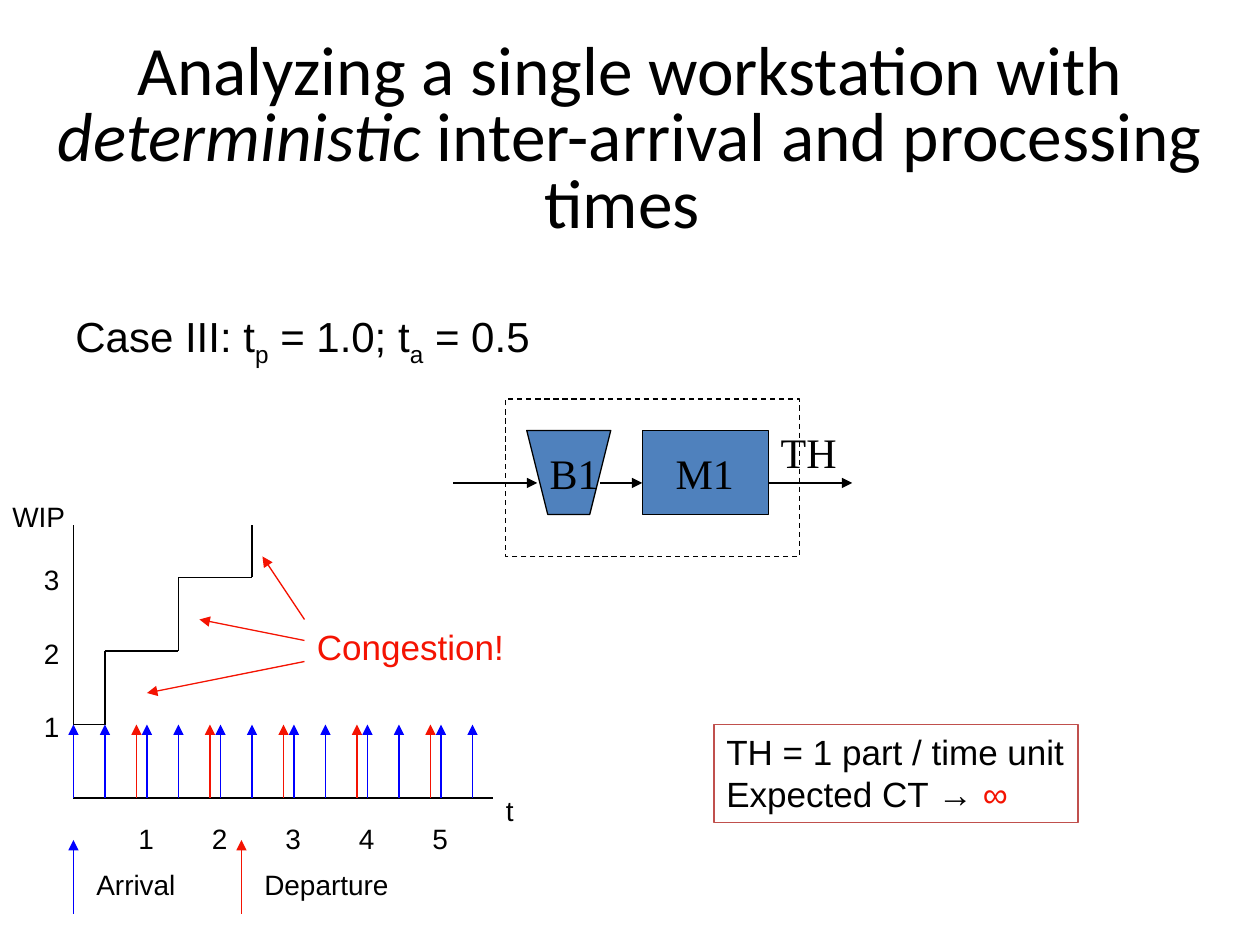
import itertools
import pptx
import pptx.dml.color
import pptx.enum.dml
import pptx.enum.shapes
import pptx.enum.text
import pptx.oxml
import pptx.oxml.ns
import pptx.util

Pt = pptx.util.Pt
rgb = pptx.dml.color.RGBColor.from_string
RECTANGLE = pptx.enum.shapes.MSO_SHAPE.RECTANGLE
BLACK, BLUE, RED = "000000", "0000FF", "F41302"
STATION_FILL, RESULT_LINE = "4F81BD", "C0504D"

deck = pptx.Presentation()
deck.slide_width, deck.slide_height = Pt(720), Pt(540)
slide = deck.slides.add_slide(deck.slide_layouts[6])
shapes = slide.shapes


def draw_line(start, end, color=BLACK, arrow=False):
    line = shapes.add_connector(
        pptx.enum.shapes.MSO_CONNECTOR.STRAIGHT, *map(Pt, start + end))
    line.line.color.rgb = rgb(color)
    line.line.width = Pt(0.75)
    if arrow:
        tail = pptx.oxml.parse_xml(
            f'<a:tailEnd {pptx.oxml.ns.nsdecls("a")} type="triangle"/>')
        line.line._get_or_add_ln().append(tail)
    properties = line._element.spPr
    properties.append(properties.makeelement(pptx.oxml.ns.qn("a:effectLst"), {}))


def write(box, paragraphs, size, face="Arial", color=BLACK, wrap=False, **layout):
    box = shapes.add_textbox(*map(Pt, box))
    frame = box.text_frame
    frame.word_wrap = wrap
    frame.vertical_anchor = layout.pop("anchor", pptx.enum.text.MSO_ANCHOR.TOP)
    for index, pieces in enumerate(paragraphs):
        paragraph = frame.add_paragraph() if index else frame.paragraphs[0]
        for name, value in layout.items():
            setattr(paragraph, name, value)
        for text, changes in pieces:
            run = paragraph.add_run()
            run.text = text
            run.font.color.rgb = rgb(changes.get("color", color))
            style = {"name": face, "size": Pt(size), "italic": changes.get("italic", False)}
            for name, value in style.items():
                setattr(run.font, name, value)
            if "baseline" in changes:
                run._r.get_or_add_rPr().set("baseline", changes["baseline"])
    return box


write((0, 24, 720, 114),
      [[("Analyzing a single workstation with ", {}),
        ("deterministic", {"italic": True}),
        (" inter-arrival and processing times ", {})]],
      39.6, "Calibri", wrap=True,
      anchor=pptx.enum.text.MSO_ANCHOR.MIDDLE,
      alignment=pptx.enum.text.PP_ALIGN.CENTER, line_spacing=0.8)

subscript = {"baseline": "-25000"}
write((36, 174, 276.5, 36),
      [[("Case III: t", {}), ("p", subscript), (" = 1.0; t", {}),
        ("a", subscript), (" = 0.5", {})]], 24)

machine = shapes.add_shape(RECTANGLE, Pt(367), Pt(246), Pt(72), Pt(48))
outline = shapes.build_freeform(301, 246, scale=Pt(1))
outline.add_line_segments([(313, 294), (337, 294), (349, 246)], close=True)
buffer = outline.convert_to_shape()
workstation = shapes.add_shape(RECTANGLE, Pt(289), Pt(228), Pt(168), Pt(90))
for part in (machine, buffer, workstation):
    part.shadow.inherit = False
    part.line.color.rgb = rgb(BLACK)
    part.line.width = Pt(0.75)
for part in (machine, buffer):
    part.fill.solid()
    part.fill.fore_color.rgb = rgb(STATION_FILL)
workstation.fill.background()
workstation.line.dash_style = pptx.enum.dml.MSO_LINE.DASH

for flow_start, flow_end in ((259, 307), (343, 367), (439, 487)):
    draw_line((flow_start, 276), (flow_end, 276), arrow=True)
for label, left, top, width in (("TH", 439, 240, 46.8), ("B1", 307, 252, 42.5),
                                ("M1", 379, 252, 47.5)):
    write((left, top, width, 36), [[(label, {})]], 24, "Times New Roman")

result = write((408, 414, 208, 56),
               [[("TH = 1 part / time unit", {})],
                [("Expected CT →", {}), (" ∞", {"color": RED})]], 20)
result.line.color.rgb = rgb(RESULT_LINE)
result.line.width = Pt(0.75)

origin_x, origin_y, step = 42, 456, 42
draw_line((origin_x, origin_y), (282, origin_y))
draw_line((origin_x, origin_y), (origin_x, 300))
wip_steps = [(42, 414), (60, 414), (60, 372), (102, 372), (102, 330), (144, 330), (144, 300)]
for corner, next_corner in itertools.pairwise(wip_steps):
    draw_line(corner, next_corner)

for first, count, color in ((42, 6, BLUE), (60, 6, BLUE), (78, 5, RED)):
    for index in range(count):
        event_x = first + step * index
        draw_line((event_x, origin_y), (event_x, origin_y - step), color, True)

axis_labels = [("WIP", 0, 282, 46), ("t", 282, 450, 19)]
axis_labels += [(str(n), 18, 444 - step * n, 23) for n in range(1, 4)]
axis_labels += [(str(n), 30 + step * n, 466, 23) for n in range(1, 6)]
legend_labels = [("Arrival", 48, 492, 60), ("Departure", 144, 492, 85.5)]
for label, left, top, width in axis_labels + legend_labels:
    write((left, top, width, 26.6), [[(label, {})]], 16)
for legend_x, color in ((42, BLUE), (138, RED)):
    draw_line((legend_x, 522), (legend_x, 480), color, True)

write((174, 354, 130, 31), [[("Congestion!", {})]], 20, color=RED, wrap=True)
for start, end in (((174, 378), (84, 396)), ((174, 366), (114, 354)),
                   ((174, 354), (150, 318))):
    draw_line(start, end, RED, True)

deck.save("out.pptx")
